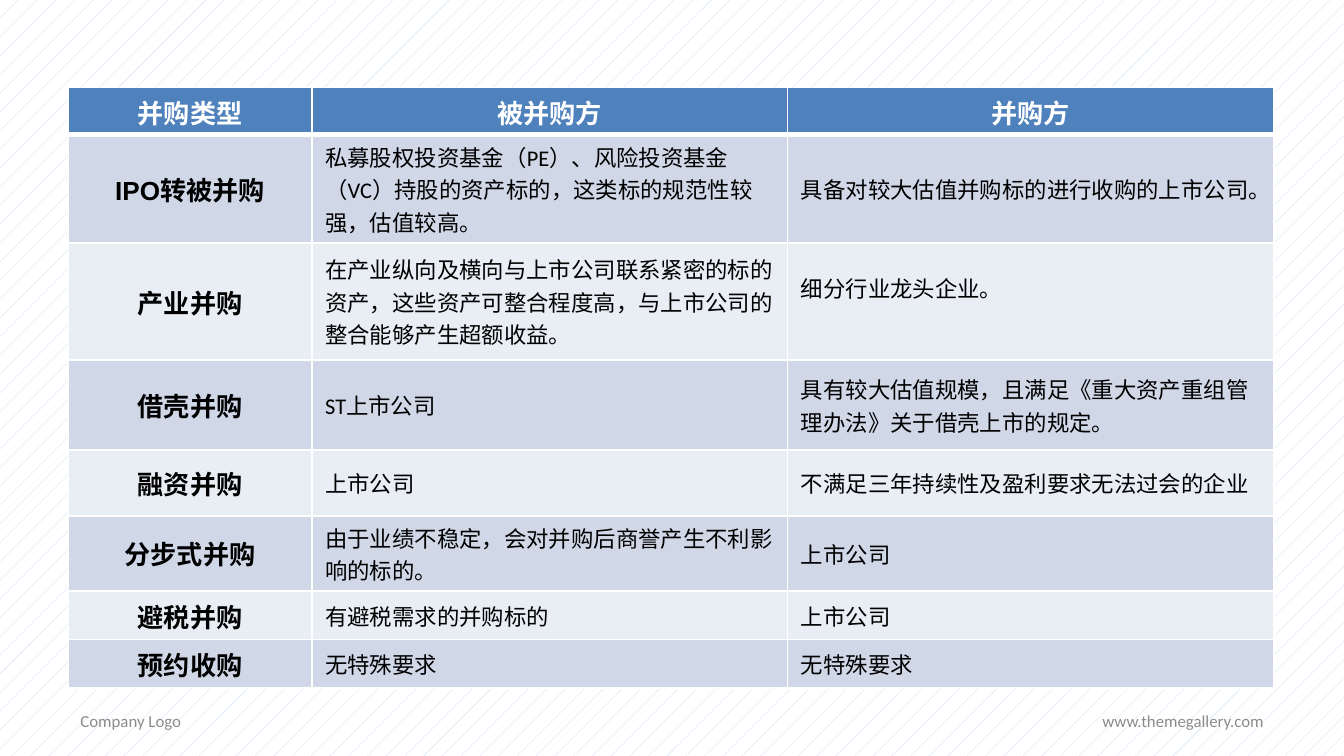
"""Build a slide with a table comparing types of mergers and acquisitions."""
from typing import NamedTuple

from lxml.etree import SubElement
from pptx import Presentation
from pptx.dml.color import RGBColor
from pptx.enum.dml import MSO_PATTERN
from pptx.enum.text import MSO_ANCHOR, PP_ALIGN
from pptx.oxml.ns import qn
from pptx.slide import Slide
from pptx.table import _Cell
from pptx.text.text import _Paragraph
from pptx.util import Inches, Pt

WHITE = RGBColor(0xFF, 0xFF, 0xFF)
BLACK = RGBColor(0x00, 0x00, 0x00)
GRAY = RGBColor(0x8C, 0x8C, 0x8C)
HEADER_BLUE = RGBColor(0x4F, 0x81, 0xBD)
BAND_DARK = RGBColor(0xD0, 0xD8, 0xE8)
BAND_LIGHT = RGBColor(0xE9, 0xED, 0xF4)
PATTERN_BLUE = RGBColor(0xC6, 0xD9, 0xF1)
CHINESE_FONT = "Noto Sans CJK SC"


class TextStyle(NamedTuple):
    font: str
    size: int
    bold: bool
    color: RGBColor
    alignment: PP_ALIGN


class DealType(NamedTuple):
    name: str
    target: str
    acquirer: str
    height: float


class FooterLabel(NamedTuple):
    text: str
    left: float
    alignment: PP_ALIGN


HEADER_STYLE = TextStyle(CHINESE_FONT, 14, True, WHITE, PP_ALIGN.CENTER)
NAME_STYLE = TextStyle("Arial", 14, True, BLACK, PP_ALIGN.CENTER)
BODY_STYLE = TextStyle("Calibri", 12, False, BLACK, PP_ALIGN.LEFT)
FOOTER_STYLE = TextStyle("Calibri", 9, False, GRAY, PP_ALIGN.LEFT)

FOOTER_LABELS = (
    FooterLabel("Company Logo", 0.5, PP_ALIGN.LEFT),
    FooterLabel("www.themegallery.com", 7.17, PP_ALIGN.RIGHT),
)
COLUMN_WIDTHS = (1.81, 3.54, 3.62)
HEADER = DealType("并购类型", "被并购方", "并购方", 0.35)
DEAL_TYPES = (
    DealType("IPO转被并购",
             "私募股权投资基金（PE）、风险投资基金（VC）持股的资产标的，这类标的规范性较强，估值较高。",
             "具备对较大估值并购标的进行收购的上市公司。", 0.81),
    DealType("产业并购",
             "在产业纵向及横向与上市公司联系紧密的标的资产，这些资产可整合程度高，与上市公司的整合能够产生超额收益。",
             "细分行业龙头企业。", 0.87),
    DealType("借壳并购", "ST上市公司",
             "具有较大估值规模，且满足《重大资产重组管理办法》关于借壳上市的规定。", 0.67),
    DealType("融资并购", "上市公司", "不满足三年持续性及盈利要求无法过会的企业", 0.49),
    DealType("分步式并购", "由于业绩不稳定，会对并购后商誉产生不利影响的标的。",
             "上市公司", 0.56),
    DealType("避税并购", "有避税需求的并购标的", "上市公司", 0.36),
    DealType("预约收购", "无特殊要求", "无特殊要求", 0.36),
)


def write_text(paragraph: _Paragraph, text: str, style: TextStyle) -> None:
    """Write one styled run into a paragraph."""
    paragraph.alignment = style.alignment
    run = paragraph.add_run()
    run.text = text
    font_format = {"name": style.font, "size": Pt(style.size), "bold": style.bold}
    for attribute, value in font_format.items():
        setattr(run.font, attribute, value)
    run.font.color.rgb = style.color
    SubElement(run.font._element, qn("a:ea"), typeface=CHINESE_FONT)


def add_borders(cell: _Cell, bottom_width: int) -> None:
    """Give a cell white borders."""
    properties = cell._tc.get_or_add_tcPr()
    widths = {"a:lnL": 1, "a:lnR": 1, "a:lnT": 1, "a:lnB": bottom_width}
    for position, (tag, width) in enumerate(widths.items()):
        line = SubElement(properties, qn(tag), w=str(Pt(width)))
        fill = SubElement(line, qn("a:solidFill"))
        SubElement(fill, qn("a:srgbClr"), val=str(WHITE))
        properties.insert(position, line)


def fill_cell(cell: _Cell, text: str, style: TextStyle, color: RGBColor) -> None:
    """Fill a table cell with a colour and centred-height text."""
    cell_format = {
        "vertical_anchor": MSO_ANCHOR.MIDDLE,
        "margin_left": Inches(0.1), "margin_right": Inches(0.1),
        "margin_top": Inches(0.04), "margin_bottom": Inches(0.04),
    }
    for attribute, value in cell_format.items():
        setattr(cell, attribute, value)
    cell.fill.solid()
    cell.fill.fore_color.rgb = color
    write_text(cell.text_frame.paragraphs[0], text, style)


def add_deal_table(slide: Slide) -> None:
    """Add the table of deal types."""
    rows = (HEADER, *DEAL_TYPES)
    shape = slide.shapes.add_table(
        len(rows), len(COLUMN_WIDTHS), Inches(0.51), Inches(0.65),
        Inches(sum(COLUMN_WIDTHS)), Inches(sum(row.height for row in rows)))
    table = shape.table
    for column, width in zip(table.columns, COLUMN_WIDTHS):
        column.width = Inches(width)
    for row_index, deal in enumerate(rows):
        table.rows[row_index].height = Inches(deal.height)
        if deal is HEADER:
            color, styles = HEADER_BLUE, (HEADER_STYLE,) * 3
        else:
            color = BAND_DARK if row_index % 2 else BAND_LIGHT
            styles = (NAME_STYLE, BODY_STYLE, BODY_STYLE)
        texts = (deal.name, deal.target, deal.acquirer)
        for column_index, (text, style) in enumerate(zip(texts, styles)):
            cell = table.cell(row_index, column_index)
            fill_cell(cell, text, style, color)
            if deal is HEADER:
                add_borders(cell, 3)
            elif row_index > 1:
                add_borders(cell, 1)
    table.cell(2, 2).margin_bottom = Inches(0.24)


def add_footer(slide: Slide, label: FooterLabel) -> None:
    """Add a footer label below the table."""
    shape = slide.shapes.add_textbox(
        Inches(label.left), Inches(5.21), Inches(2.33), Inches(0.3))
    text_frame = shape.text_frame
    text_frame.word_wrap = True
    text_frame.vertical_anchor = MSO_ANCHOR.MIDDLE
    style = FOOTER_STYLE._replace(alignment=label.alignment)
    write_text(text_frame.paragraphs[0], label.text, style)


def main() -> None:
    """Create and save the presentation."""
    presentation = Presentation()
    presentation.slide_width = Inches(10)
    presentation.slide_height = presentation.slide_width * 9 // 16
    slide = presentation.slides.add_slide(presentation.slide_layouts[6])
    background = slide.background.fill
    background.patterned()
    background.pattern = MSO_PATTERN.PERCENT_5
    background.fore_color.rgb = PATTERN_BLUE
    background.back_color.rgb = WHITE
    for label in FOOTER_LABELS:
        add_footer(slide, label)
    add_deal_table(slide)
    presentation.save("out.pptx")


if __name__ == "__main__":
    main()
